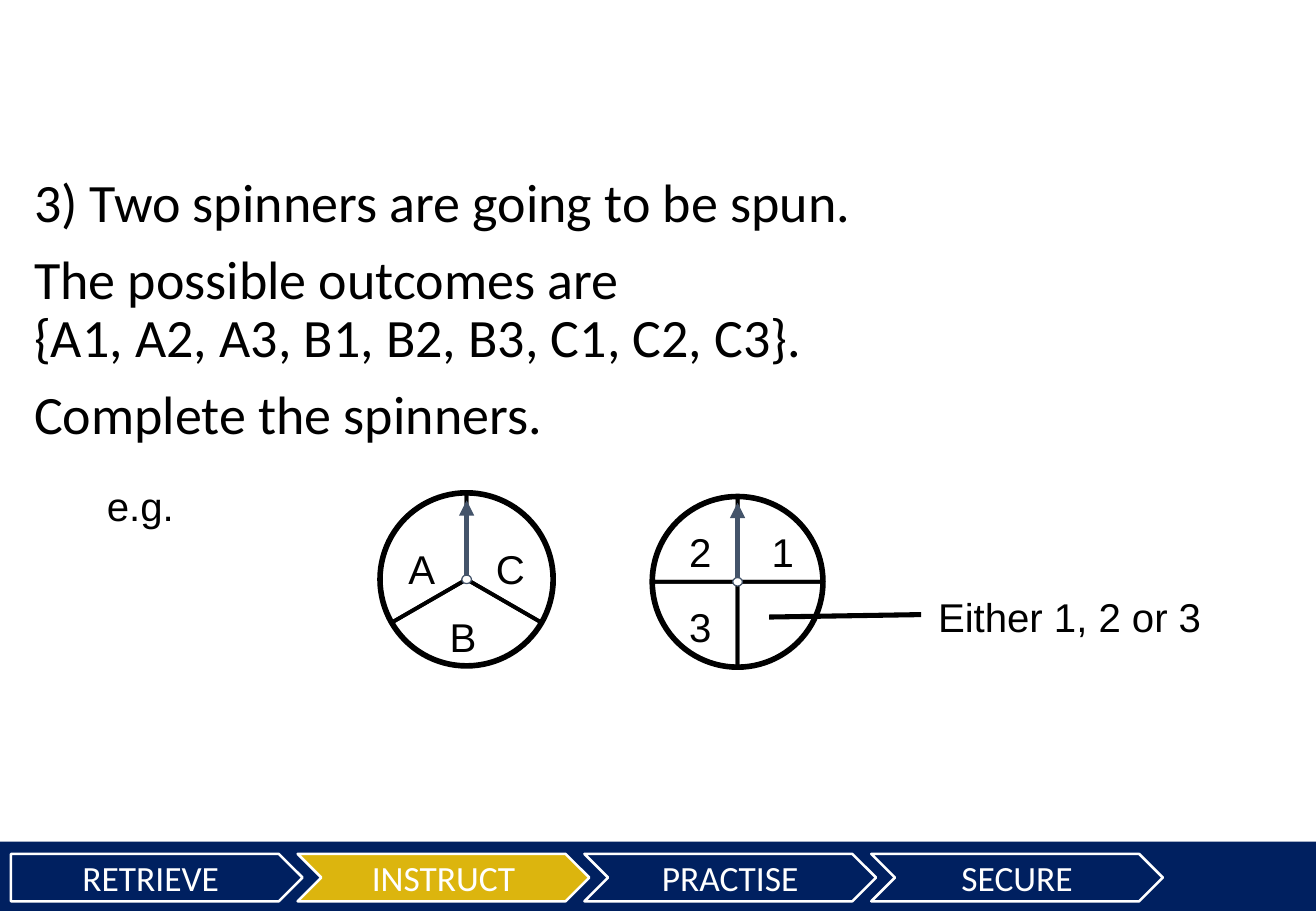
import pptx
import pptx.util
import pptx.dml.color
import pptx.enum.shapes
import pptx.enum.text
import pptx.oxml.ns
import lxml.etree

Inches = pptx.util.Inches
Pt = pptx.util.Pt
SHAPE = pptx.enum.shapes.MSO_SHAPE
ALIGN = pptx.enum.text.PP_ALIGN
ANCHOR = pptx.enum.text.MSO_ANCHOR
qn = pptx.oxml.ns.qn

COLOURS = {"navy": "002060", "gold": "DCB50E", "white": "FFFFFF", "black": "000000", "slate": "44546A"}

STAGES = ["RETRIEVE", "INSTRUCT", "PRACTISE", "SECURE"]
CURRENT_STAGE = "INSTRUCT"
QUESTION = [
    "3) Two spinners are going to be spun.",
    "The possible outcomes are \n{A1, A2, A3, B1, B2, B3, C1, C2, C3}.",
    "Complete the spinners.",
]
SPINNERS = [
    {"centre": (3.84, 4.77), "diameter": 1.44, "sectors": 3, "arrow_tip": 4.12},
    {"centre": (6.07, 4.79), "diameter": 1.42, "sectors": 4, "arrow_tip": 4.14},
]
LABELS = [
    ("A", 3.36, 4.42, 0.29),
    ("B", 3.7, 4.98, 0.29),
    ("C", 4.08, 4.42, 0.29),
    ("2", 5.67, 4.28, 0.29),
    ("1", 6.35, 4.28, 0.29),
    ("3", 5.67, 4.9, 0.29),
    ("Either 1, 2 or 3", 7.72, 4.82, 2.6),
    ("e.g.", 0.88, 3.9, 0.77),
]

deck = pptx.Presentation()
deck.slide_width, deck.slide_height = Inches(10.83), Inches(7.5)
slide = deck.slides.add_slide(deck.slide_layouts[1])


def rgb(name):
    return pptx.dml.color.RGBColor.from_string(COLOURS[name])


def write(frame, paragraphs, *, size, font, colour="black", align=ALIGN.LEFT,
          anchor=ANCHOR.TOP, spacing=1.0, before=0, after=0):
    frame.word_wrap = True
    frame.vertical_anchor = anchor
    frame.margin_left = frame.margin_right = frame.margin_top = frame.margin_bottom = 0
    for index, text in enumerate(paragraphs):
        paragraph = frame.paragraphs[0] if index == 0 else frame.add_paragraph()
        paragraph.text = text
        paragraph.alignment = align
        paragraph.line_spacing = spacing
        paragraph.space_before = Pt(before if index else 0)
        paragraph.space_after = Pt(after)
        for run in paragraph.runs:
            run.font.size = Pt(size)
            run.font.name = font
            run.font.color.rgb = rgb(colour)


def draw(kind, left, top, width, height, *, fill=None, line=None, weight=2.25):
    shape = slide.shapes.add_shape(kind, Inches(left), Inches(top), Inches(width), Inches(height))
    shape.shadow.inherit = False
    if fill:
        shape.fill.solid()
        shape.fill.fore_color.rgb = rgb(fill)
    else:
        shape.fill.background()
    if line:
        shape.line.color.rgb = rgb(line)
        shape.line.width = Pt(weight)
    else:
        shape.line.fill.background()
    return shape


def connect(start, end, colour, arrow=False):
    line = slide.shapes.add_connector(
        pptx.enum.shapes.MSO_CONNECTOR.STRAIGHT, *map(Inches, (*start, *end)))
    line.line.color.rgb = rgb(colour)
    line.line.width = Pt(3)
    if arrow:
        lxml.etree.SubElement(line.line._get_or_add_ln(), qn("a:tailEnd"), type="triangle")
    lxml.etree.SubElement(line._element.spPr, qn("a:effectLst"))


def draw_centred(kind, centre, width, height, **look):
    x, y = centre
    return draw(kind, x - width / 2, y - height / 2, width, height, **look)


def draw_spinner(centre, diameter, sectors, arrow_tip):
    draw_centred(SHAPE.OVAL, centre, diameter, diameter, line="black")
    sweep = 360 / sectors
    inner = diameter - 0.03
    for number in range(sectors):
        start = (270 + number * sweep) % 360
        sector = draw_centred(SHAPE.PIE, centre, inner, inner, line="black")
        sector.adjustments[0] = start * 0.6
        sector.adjustments[1] = (start + sweep) % 360 * 0.6
    connect(centre, (centre[0], arrow_tip), "slate", arrow=True)
    draw_centred(SHAPE.OVAL, centre, 0.08, 0.07, fill="white", line="slate", weight=0.75)


draw(SHAPE.RECTANGLE, 0, 6.93, 10.83, 0.57, fill="navy")
for position, stage in enumerate(STAGES):
    step = draw(SHAPE.CHEVRON if position else SHAPE.PENTAGON,
                0.09 + position * 2.36, 7.03, 2.4, 0.39,
                fill="gold" if stage == CURRENT_STAGE else "navy", line="white", weight=1.5)
    write(step.text_frame, [stage], size=21, font="Calibri", colour="white",
          align=ALIGN.CENTER, anchor=ANCHOR.MIDDLE)

title = slide.shapes.title
title._element.getparent().remove(title._element)
question = slide.placeholders[1]
question.left, question.top, question.width, question.height = map(Inches, (0.28, 1.45, 9.76, 3.58))
write(question.text_frame, QUESTION, size=32, font="Calibri", spacing=0.9, before=10.8)
for paragraph in question.text_frame.paragraphs:
    properties = paragraph._p.get_or_add_pPr()
    properties.set("marL", "0")
    properties.set("indent", "0")
    lxml.etree.SubElement(properties, qn("a:buNone"))

for spinner in SPINNERS:
    draw_spinner(**spinner)
connect((6.33, 5.08), (7.58, 5.06), "black")
for text, left, top, width in LABELS:
    label = slide.shapes.add_textbox(Inches(left), Inches(top), Inches(width), Inches(0.62))
    write(label.text_frame, [text], size=23.8, font="Arial", spacing=1.15, after=10.8)

deck.save("out.pptx")
